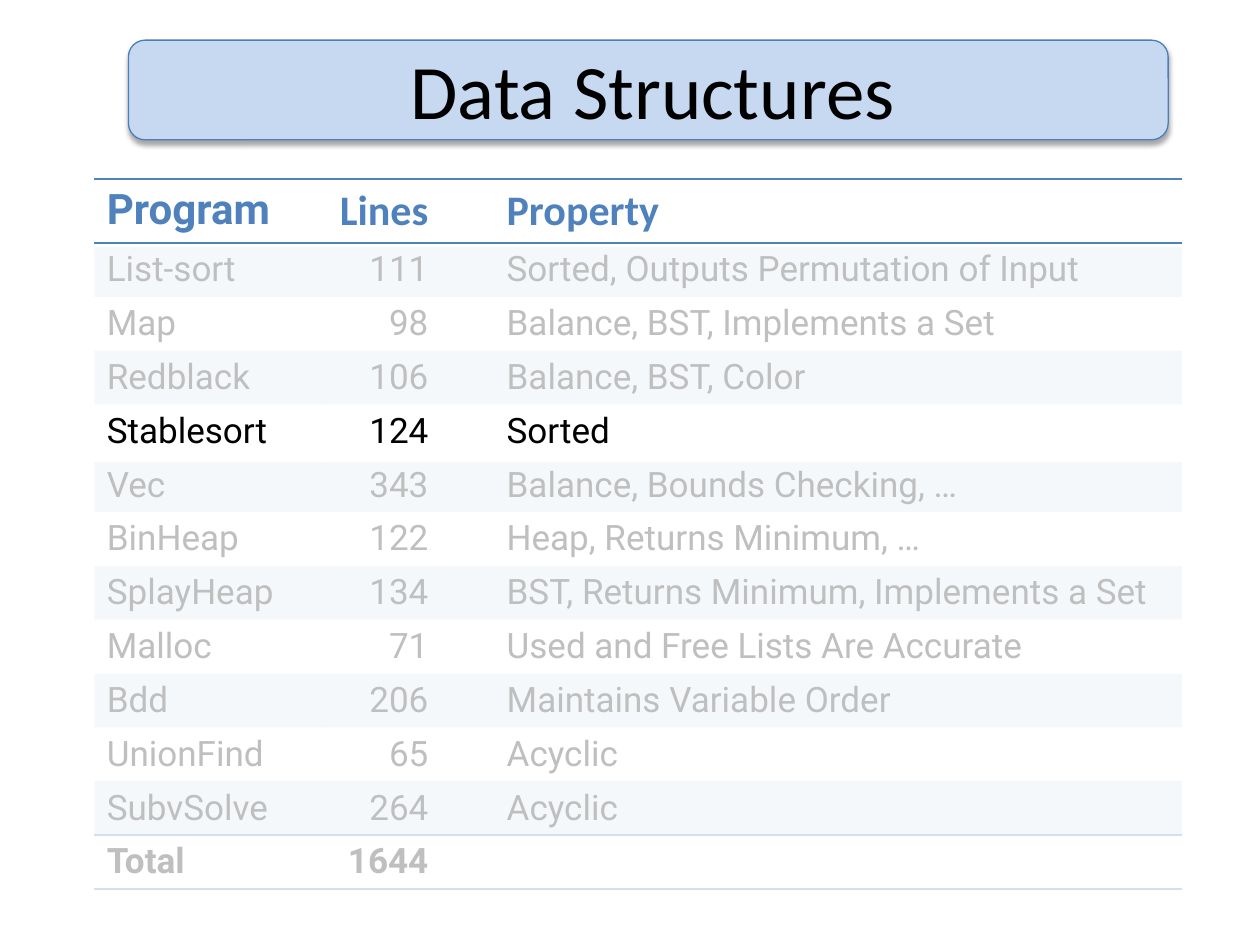
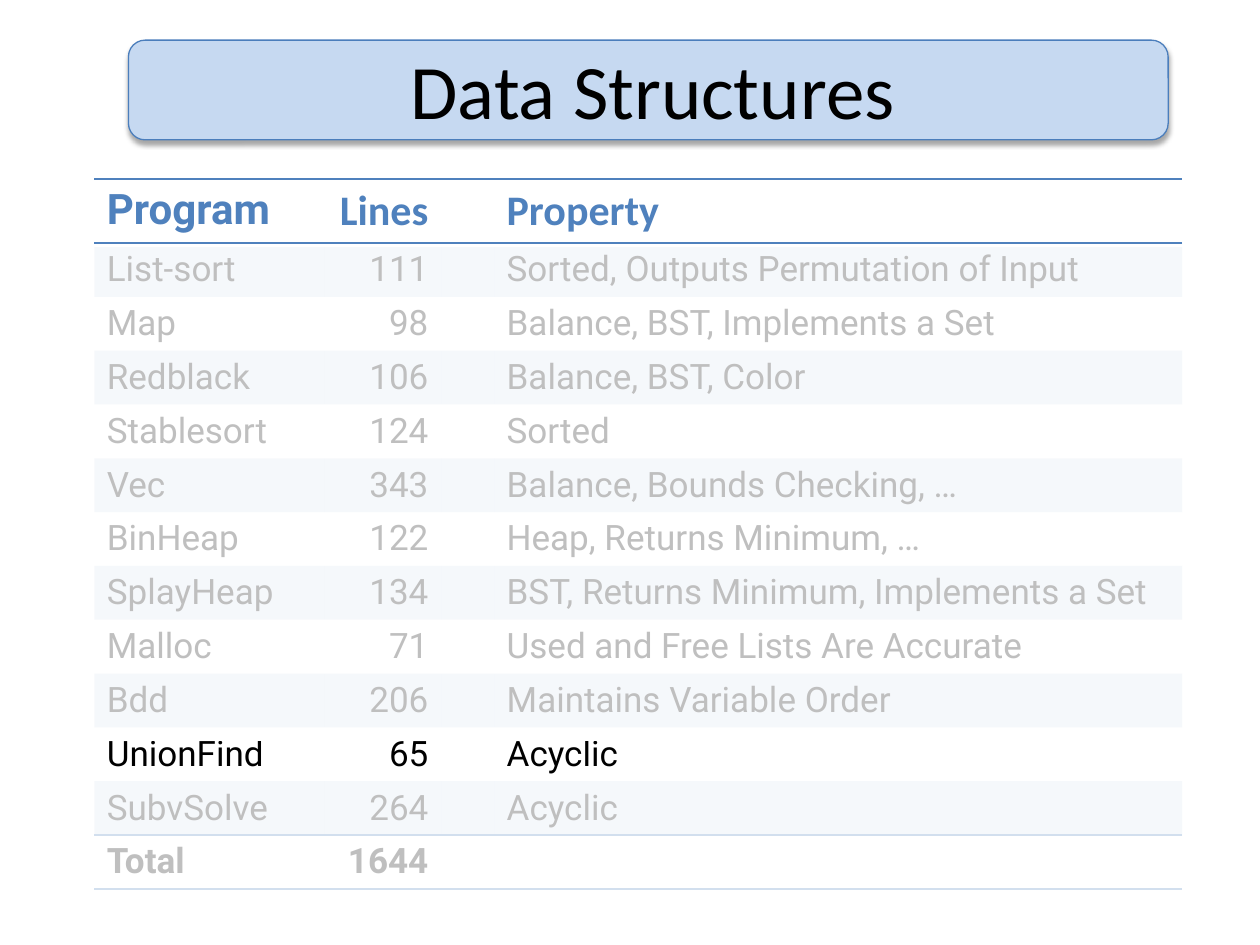
from dataclasses import dataclass
from lxml.etree import SubElement as Sub
from pptx import Presentation
from pptx.dml.color import RGBColor as Rgb
from pptx.enum.shapes import MSO_SHAPE as Kind
from pptx.enum.text import MSO_ANCHOR as Anchor, PP_ALIGN as Align
from pptx.oxml.ns import qn
from pptx.util import Cm, Pt

TITLE = "Data Structures"
HEAD = ("Program", "Lines", "", "Property")
ROWS = [
    ("List-sort", 111, "Sorted, Outputs Permutation of Input"),
    ("Map", 98, "Balance, BST, Implements a Set"),
    ("Redblack", 106, "Balance, BST, Color"),
    ("Stablesort", 124, "Sorted"),
    ("Vec", 343, "Balance, Bounds Checking, …"),
    ("BinHeap", 122, "Heap, Returns Minimum, …"),
    ("SplayHeap", 134, "BST, Returns Minimum, Implements a Set"),
    ("Malloc", 71, "Used and Free Lists Are Accurate"),
    ("Bdd", 206, "Maintains Variable Order"),
    ("UnionFind", 65, "Acyclic"),
    ("SubvSolve", 264, "Acyclic"),
]
TOTAL = ("Total", sum(row[1] for row in ROWS), "", "")

# Pale covers of each slide that leave one program in focus: left, top, height
COVERS = [
    [(1.47, 4.95, 3.33), (1.27, 9.27, 9.14)],
    [(1.47, 4.95, 9.96), (1.7, 15.7, 2.72)],
]
COVER_W = 22.66
COLS = (4.65, 2.34, 1.07, 13.87)
HEAD_H, ROW_H = 1.27, 1.02
PLAIN = "{2D5ABB26-0587-4C30-8999-92F81FD0307C}"  # no style, no grid


@dataclass(frozen=True)
class Theme:
    ink: str = "000000"
    blue: str = "4F81BD"
    edge: str = "4B7EBC"
    pale: str = "C6D9F1"
    white: str = "FFFFFF"
    sans: str = "Calibri"
    body: str = "Roboto"
    big: int = 44
    mid: int = 24
    small: int = 20


LOOK = Theme()


def write(frame, text, size=LOOK.small, font=LOOK.body, color=LOOK.ink,
          bold=False, align=Align.LEFT):
    para = frame.paragraphs[0]
    para.alignment = align
    run = para.add_run()
    run.text = str(text)
    face = run.font
    face.size, face.name, face.bold = Pt(size), font, bold
    face.color.rgb = Rgb.from_string(color)


def paint(item, color, alpha=100):
    """Fill a shape or cell; alpha is the opacity in percent."""
    item.fill.solid()
    item.fill.fore_color.rgb = Rgb.from_string(color)
    if alpha < 100:
        root = item._tc.tcPr if hasattr(item, "_tc") else item.element.spPr
        tone = root.find(qn("a:solidFill")).find(qn("a:srgbClr"))
        Sub(tone, qn("a:alpha"), val=str(alpha * 1000))


def add_box(slide, kind, area, fill, line, width, alpha=100):
    box = slide.shapes.add_shape(kind, *map(Cm, area))
    box.shadow.inherit = False
    paint(box, fill, alpha)
    box.line.color.rgb = Rgb.from_string(line)
    box.line.width = Pt(width)
    return box


def rule(cell):
    """Draw the blue line above and below a cell."""
    props = cell._tc.get_or_add_tcPr()
    for spot, tag in enumerate(("a:lnT", "a:lnB")):
        line = Sub(props, qn(tag), w=str(Pt(1)))
        Sub(Sub(line, qn("a:solidFill")), qn("a:srgbClr"), val=LOOK.blue)
        props.insert(spot, line)


def set_layout(layout, slide):
    """Put the title band and the title's place on the shared layout."""
    band = add_box(slide, Kind.ROUNDED_RECTANGLE, (2.59, 0.81, 20.96, 2.01),
                   LOOK.pale, LOOK.edge, 0.75)
    glow = Sub(band.element.spPr.find(qn("a:effectLst")), qn("a:outerShdw"),
               blurRad=str(Pt(3.1)), dist=str(Pt(1.8)), dir="5400000",
               rotWithShape="0")
    Sub(Sub(glow, qn("a:srgbClr"), val=LOOK.ink), qn("a:alpha"), val="35000")
    layout.shapes.element.insert(2, band.element)
    title = layout.placeholders[0]
    title.left, title.top, title.width, title.height = map(
        Cm, (1.73, 0.2, 22.86, 3.18))


def add_grid(slide):
    data = [HEAD, *((name, count, "", prop) for name, count, prop in ROWS), TOTAL]
    last = len(data) - 1
    frame = slide.shapes.add_table(
        len(data), len(COLS), Cm(1.9), Cm(3.61), Cm(sum(COLS)),
        Cm(HEAD_H + last * ROW_H))
    grid = frame.table
    grid._tbl.tblPr.find(qn("a:tableStyleId")).text = PLAIN
    for col, width in zip(grid.columns, COLS):
        col.width = Cm(width)
    for r, row in enumerate(data):
        grid.rows[r].height = Cm(ROW_H if r else HEAD_H)
        for c, text in enumerate(row):
            cell = grid.cell(r, c)
            if r % 2 and r < last:
                paint(cell, LOOK.blue, 20)
            else:
                cell.fill.background()
            if r in (0, last):
                rule(cell)
            if text == "":
                continue
            style = {"bold": r in (0, last),
                     "align": Align.RIGHT if c == 1 else Align.LEFT}
            if r == 0:
                style.update(size=LOOK.mid, color=LOOK.blue,
                             font=LOOK.sans if c else LOOK.body)
            write(cell.text_frame, text, **style)


def main():
    deck = Presentation()
    deck.slide_width, deck.slide_height = Cm(25.4), Cm(19.05)
    layout = deck.slide_layouts[5]
    for n, covers in enumerate(COVERS):
        slide = deck.slides.add_slide(layout)
        if n == 0:
            set_layout(layout, slide)
        title = slide.shapes.title.text_frame
        title.vertical_anchor = Anchor.MIDDLE
        write(title, TITLE, size=LOOK.big, font=LOOK.sans, align=Align.CENTER)
        add_grid(slide)
        for left, top, height in covers:
            add_box(slide, Kind.RECTANGLE, (left, top, COVER_W, height),
                    LOOK.white, LOOK.white, 2, alpha=75)
    deck.save("out.pptx")


if __name__ == "__main__":
    main()
